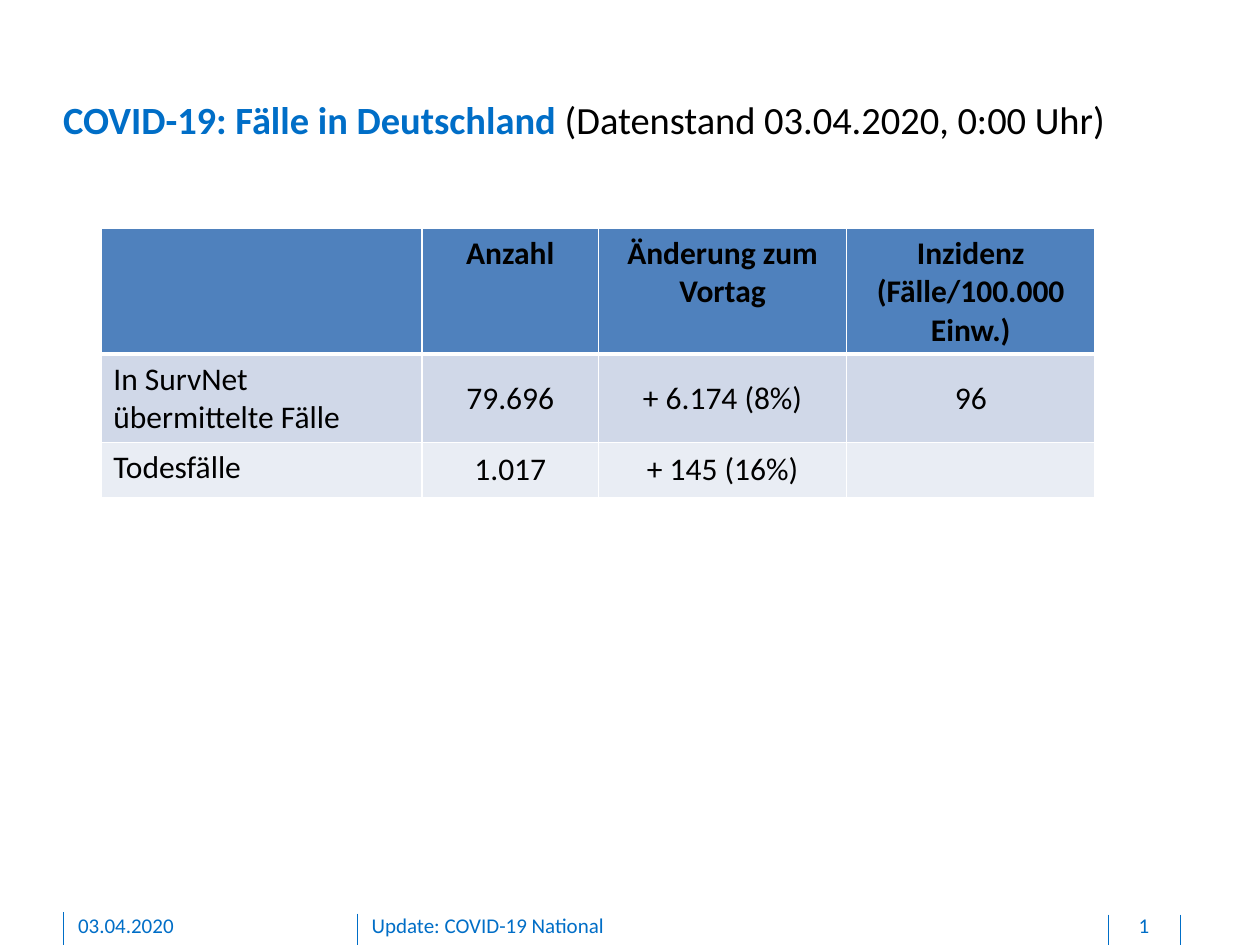
from lxml import etree
from pptx import Presentation, util as u
from pptx.dml.color import RGBColor
from pptx.enum import shapes, text
from pptx.oxml import ns

BLUE, BLACK, WHITE = "006EC7", "000000", "FFFFFF"
MID = text.PP_ALIGN.CENTER


def tint(part, code):
    part.rgb = RGBColor.from_string(code)


class Page:
    """Holds the style and the current slide."""

    font = "Calibri"

    def __init__(self, deck):
        self.slide = deck.slides.add_slide(deck.slide_layouts[6])

    def run(self, para, words, size, code, bold=False):
        run = para.add_run()
        run.text = words
        run.font.name, run.font.size, run.font.bold = self.font, u.Pt(size), bold
        tint(run.font.color, code)

    def label(self, left, top, width, height, runs, size, align=None, base=0):
        box = self.slide.shapes.add_textbox(*map(u.Inches, (left, top, width, height)))
        frame = box.text_frame
        frame.word_wrap = True
        frame.margin_left = frame.margin_right = frame.margin_top = 0
        frame.margin_bottom = u.Inches(base)
        para = frame.paragraphs[0]
        para.alignment = align
        for words, code, bold in runs:
            self.run(para, words, size, code, bold)

    def rule(self, left, top):
        line = self.slide.shapes.add_connector(
            shapes.MSO_CONNECTOR.STRAIGHT,
            *map(u.Inches, (left, top, left, 7.5)))
        tint(line.line.color, BLUE)
        line.line.width = u.Pt(0.5)
        etree.SubElement(line._element.spPr, ns.qn("a:effectLst"))

    def edge(self, cell, side, width):
        props = cell._tc.get_or_add_tcPr()
        line = etree.SubElement(props, ns.qn("a:ln" + side), w=str(u.Pt(width)))
        fill = etree.SubElement(line, ns.qn("a:solidFill"))
        etree.SubElement(fill, ns.qn("a:srgbClr"), val=WHITE)

    def table(self, left, top, widths, heights, rows, fills):
        size = map(u.Inches, (left, top, sum(widths), sum(heights)))
        grid = self.slide.shapes.add_table(len(rows), len(widths), *size).table
        for col, width in zip(grid.columns, widths):
            col.width = u.Inches(width)
        for r, row in enumerate(rows):
            grid.rows[r].height = u.Inches(heights[r])
            for c, words in enumerate(row):
                cell = grid.cell(r, c)
                for side in "LRTB":
                    thick = (r, side) in ((0, "B"), (1, "T"))
                    self.edge(cell, side, 3 if thick else 1)
                cell.fill.solid()
                tint(cell.fill.fore_color, fills[r])
                para = cell.text_frame.paragraphs[0]
                if c:
                    para.alignment = MID
                    if r:
                        cell.vertical_anchor = text.MSO_ANCHOR.MIDDLE
                if words:
                    self.run(para, words, 18, BLACK, r == 0)


def main():
    deck = Presentation()
    deck.slide_width, deck.slide_height = u.Inches(10), u.Inches(7.5)
    page = Page(deck)
    for left, top in ((0.5, 7.24), (2.84, 7.25), (8.8, 7.26), (9.37, 7.26)):
        page.rule(left, top)
    page.label(0.5, 0.76, 8.85, 0.37, [
        ("COVID-19: Fälle in Deutschland ", BLUE, True),
        ("(Datenstand 03.04.2020, 0:00 Uhr)", BLACK, False)], 22)
    for left, width, words, align in (
            (0.62, 2.03, "03.04.2020", None),
            (2.95, 5.67, "Update: COVID-19 National", None),
            (8.81, 0.54, "1", MID)):
        page.label(left, 7.24, width, 0.21, [(words, BLUE, False)], 12, align, 0.05)
    page.table(0.8, 1.81, (2.55, 1.4, 1.97, 1.97), (1, 0.7, 0.44), (
        ("", "Anzahl", "Änderung zum Vortag", "Inzidenz (Fälle/100.000 Einw.)"),
        ("In SurvNet übermittelte Fälle", "79.696", "+ 6.174 (8%)", "96"),
        ("Todesfälle", "1.017", "+ 145 (16%)", "")),
        ("4F81BD", "D0D8E8", "E9EDF4"))
    deck.save("out.pptx")


if __name__ == "__main__":
    main()
